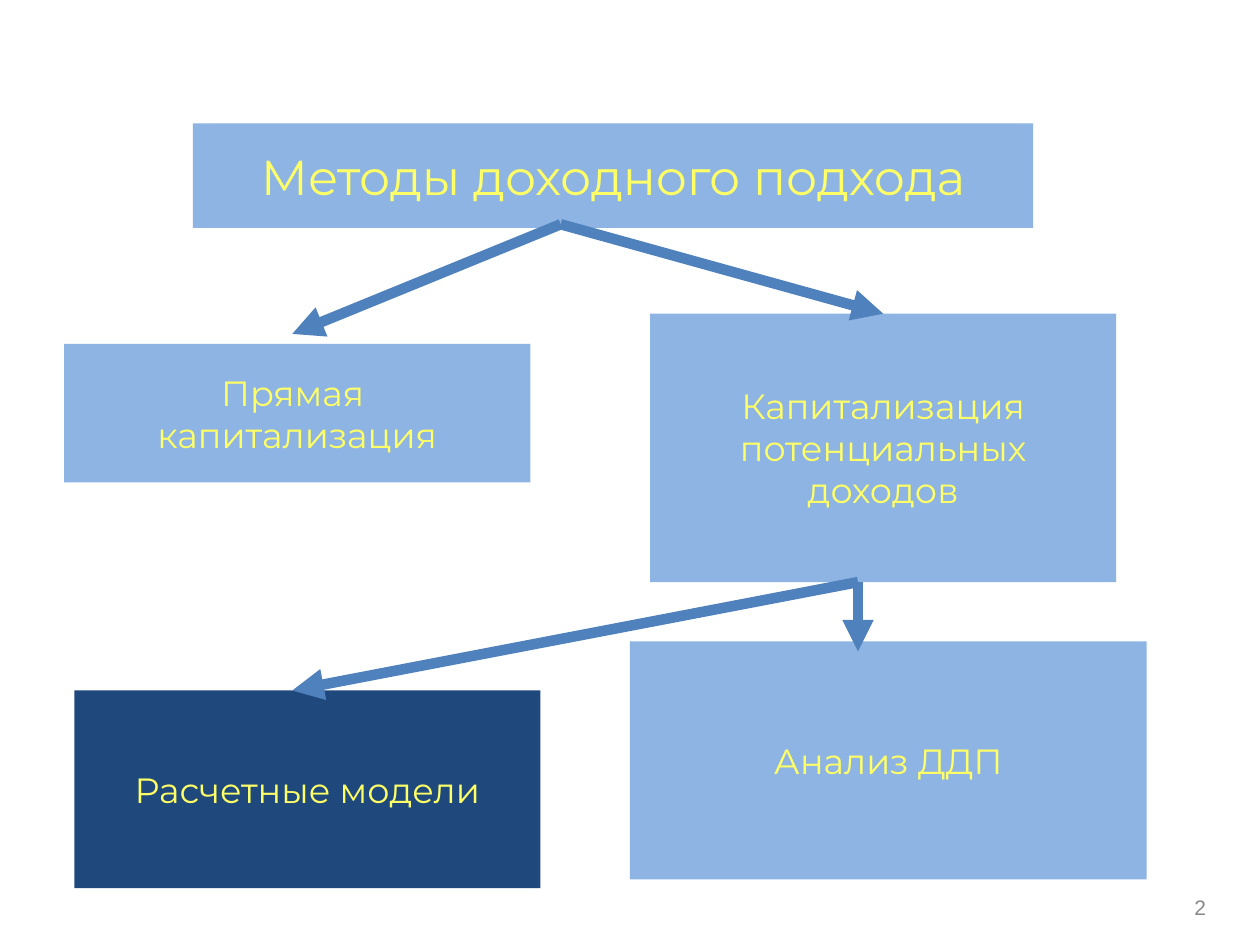
from lxml import etree
from pptx import Presentation
from pptx.dml.color import RGBColor
from pptx.enum.shapes import MSO_CONNECTOR, MSO_SHAPE
from pptx.enum.text import MSO_ANCHOR, MSO_AUTO_SIZE, PP_ALIGN
from pptx.oxml.ns import qn
from pptx.util import Inches, Pt

RECTANGLE = MSO_SHAPE.RECTANGLE
STRAIGHT = MSO_CONNECTOR.STRAIGHT
MIDDLE, BOTTOM = MSO_ANCHOR.MIDDLE, MSO_ANCHOR.BOTTOM
CENTER, RIGHT = PP_ALIGN.CENTER, PP_ALIGN.RIGHT
NO_AUTOFIT = MSO_AUTO_SIZE.NONE


def color(value):
    return RGBColor.from_string(value)


class SchemeSlide:
    font = "Montserrat"
    number_font = "Arial"
    text_color = "FFFF66"
    number_color = "898989"
    light_fill = "8EB4E3"
    dark_fill = "1F497D"
    arrow_color = "4F81BD"

    def __init__(self, presentation):
        self.slide = presentation.slides.add_slide(presentation.slide_layouts[5])

    def set_text(self, shape, lines, size, font, text_color, alignment, anchor):
        frame = shape.text_frame
        frame.word_wrap = True
        frame.auto_size = NO_AUTOFIT
        frame.vertical_anchor = anchor
        paragraph = frame.paragraphs[0]
        paragraph.alignment = alignment
        for index, line in enumerate(lines):
            if index:
                paragraph.add_line_break()
            run = paragraph.add_run()
            run.text = line
            run.font.name = font
            run.font.size = Pt(size)
            run.font.color.rgb = color(text_color)

    def fill_box(self, shape, lines, size, fill):
        shape.fill.solid()
        shape.fill.fore_color.rgb = color(fill)
        shape.line.fill.background()
        self.set_text(shape, lines, size, self.font, self.text_color, CENTER, MIDDLE)

    def title(self, text, left, top, width, height):
        shape = self.slide.shapes.title
        shape.left, shape.top = Inches(left), Inches(top)
        shape.width, shape.height = Inches(width), Inches(height)
        self.fill_box(shape, [text], 28, self.light_fill)

    def box(self, lines, left, top, width, height, fill=light_fill):
        shape = self.slide.shapes.add_shape(
            RECTANGLE, Inches(left), Inches(top), Inches(width), Inches(height))
        shape.shadow.inherit = False
        self.fill_box(shape, lines, 20, fill)

    def arrow(self, start, end):
        connector = self.slide.shapes.add_connector(
            STRAIGHT, *(Inches(value) for value in start + end))
        connector.line.color.rgb = color(self.arrow_color)
        connector.line.width = Pt(6)
        properties = connector._element.spPr
        outline = properties.find(qn("a:ln"))
        etree.SubElement(outline, qn("a:tailEnd"), type="triangle")
        etree.SubElement(properties, qn("a:effectLst"))

    def number(self, text, left, top, width, height):
        shape = self.slide.shapes.add_textbox(
            Inches(left), Inches(top), Inches(width), Inches(height))
        self.set_text(
            shape, [text], 12, self.number_font, self.number_color, RIGHT, BOTTOM)


def main():
    presentation = Presentation()
    presentation.slide_width = Inches(10)
    presentation.slide_height = Inches(7.5)
    scheme = SchemeSlide(presentation)

    scheme.number("2", 7.17, 6.83, 2.5, 0.52)
    scheme.title("Методы доходного подхода", 1.53, 0.98, 6.67, 0.83)
    scheme.box(["Прямая ", "капитализация"], 0.51, 2.73, 3.7, 1.1)
    scheme.box(["Капитализация потенциальных доходов"], 5.16, 2.49, 3.7, 2.13)
    scheme.box(["Расчетные модели"], 0.59, 5.48, 3.7, 1.57, scheme.dark_fill)
    scheme.box(["Анализ ДДП"], 5, 5.09, 4.1, 1.89)

    branches = {
        (4.45, 1.78): [(2.32, 2.65), (7.01, 2.49)],
        (6.81, 4.62): [(6.81, 5.17), (2.32, 5.48)],
    }
    for start, ends in branches.items():
        for end in ends:
            scheme.arrow(start, end)

    presentation.save("out.pptx")


if __name__ == "__main__":
    main()
